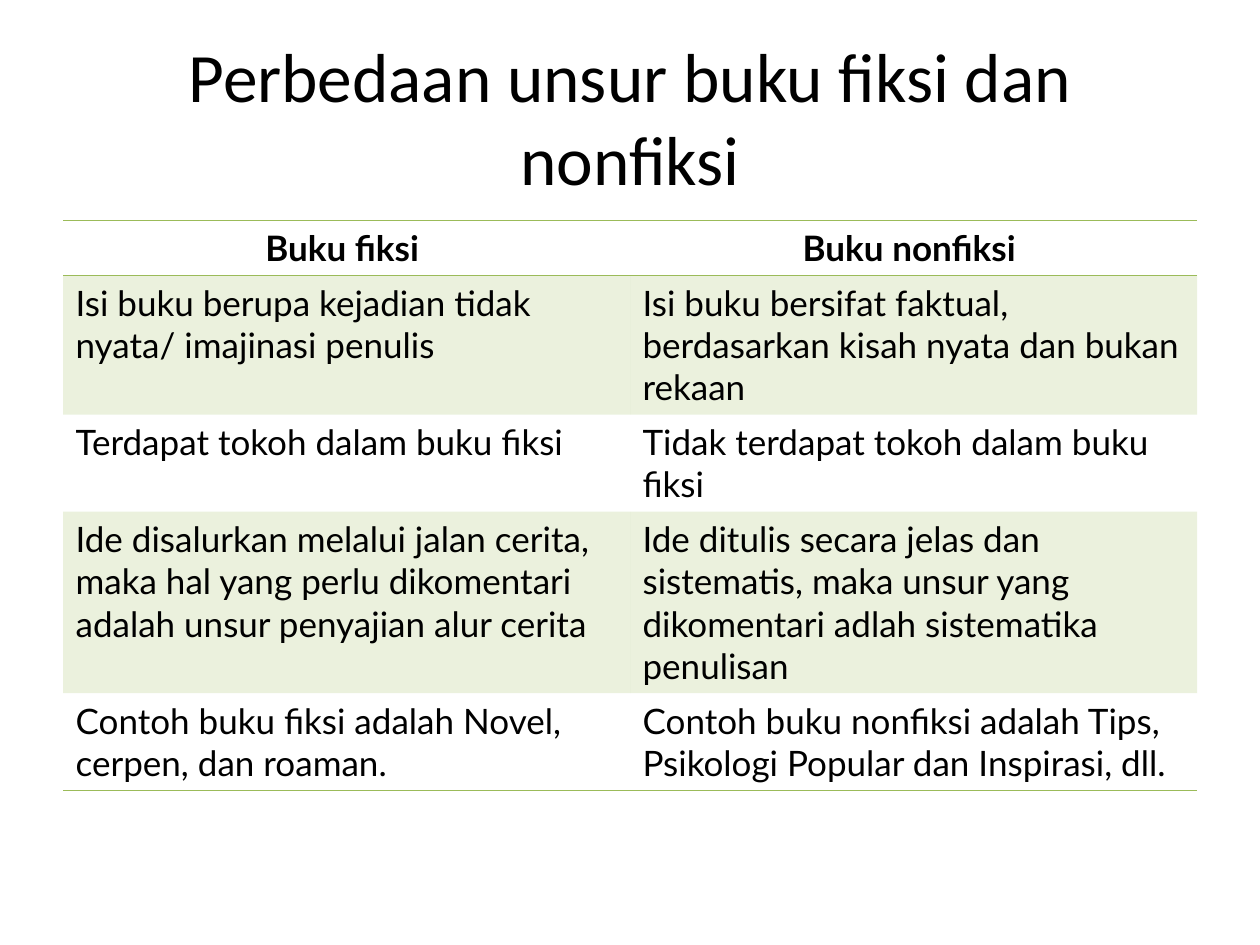
from lxml.etree import SubElement
from pptx import Presentation
from pptx.dml.color import RGBColor
from pptx.enum.text import MSO_ANCHOR, MSO_AUTO_SIZE, PP_ALIGN
from pptx.oxml.ns import qn
from pptx.util import Inches, Pt

TITLE = "Perbedaan unsur buku fiksi dan nonfiksi"
ROWS = [
    ("Buku fiksi ", "Buku nonfiksi "),
    ("Isi buku berupa kejadian tidak nyata/ imajinasi penulis",
     "Isi buku bersifat faktual, berdasarkan kisah nyata dan bukan rekaan"),
    ("Terdapat tokoh dalam buku fiksi",
     "Tidak terdapat tokoh dalam buku fiksi"),
    ("Ide disalurkan melalui jalan cerita, maka hal yang perlu dikomentari "
     "adalah unsur penyajian alur cerita",
     "Ide ditulis secara jelas dan sistematis, maka unsur yang dikomentari "
     "adlah sistematika penulisan"),
    ("Contoh buku fiksi adalah Novel, cerpen, dan roaman.",
     "Contoh buku nonfiksi adalah Tips, Psikologi Popular dan Inspirasi, dll."),
]
GREEN, BLACK = "9BBB59", "000000"
BAND_OPACITY = 20
PLAIN_STYLE = "{2D5ABB26-0587-4C30-8999-92F81FD0307C}"
LEFT, WIDTH = 0.5, 9
TITLE_FORMAT = {"name": "Calibri", "size": Pt(39.6), "bold": False}
HEADER_FORMAT = {"name": "Lato", "size": Pt(20), "bold": True}
BODY_FORMAT = {**HEADER_FORMAT, "bold": False}


def write(text_frame, text, formats, alignment):
    text_frame.text = text
    paragraph = text_frame.paragraphs[0]
    paragraph.alignment = alignment
    font = paragraph.runs[0].font
    for name, value in formats.items():
        setattr(font, name, value)
    font.color.rgb = RGBColor.from_string(BLACK)


def add_border(cell, side):
    properties = cell._tc.get_or_add_tcPr()
    line = SubElement(properties, qn(f"a:ln{side}"), w=str(Pt(1)))
    fill = SubElement(line, qn("a:solidFill"))
    SubElement(fill, qn("a:srgbClr"), val=GREEN)


def fill_band(cell):
    cell.fill.solid()
    cell.fill.fore_color.rgb = RGBColor.from_string(GREEN)
    color = cell._tc.tcPr.find(f"{qn('a:solidFill')}/{qn('a:srgbClr')}")
    SubElement(color, qn("a:alpha"), val=str(BAND_OPACITY * 1000))


def add_title(slide):
    title = slide.shapes.title
    title.left, title.top, title.width, title.height = map(
        Inches, (LEFT, 0.3, WIDTH, 1.25))
    write(title.text_frame, TITLE, TITLE_FORMAT, PP_ALIGN.CENTER)
    title.text_frame.auto_size = MSO_AUTO_SIZE.NONE
    title.text_frame.vertical_anchor = MSO_ANCHOR.MIDDLE


def add_comparison(slide):
    frame = slide.shapes.add_table(
        len(ROWS), len(ROWS[0]), Inches(LEFT), Inches(1.75), Inches(WIDTH), Inches(3.5))
    table = frame.table
    table._tbl.tblPr.find(qn("a:tableStyleId")).text = PLAIN_STYLE
    for row_index, texts in enumerate(ROWS):
        table.rows[row_index].height = Inches(0.41)
        is_header = row_index == 0
        for column_index, text in enumerate(texts):
            cell = table.cell(row_index, column_index)
            write(cell.text_frame, text,
                  HEADER_FORMAT if is_header else BODY_FORMAT,
                  PP_ALIGN.CENTER if is_header else PP_ALIGN.LEFT)
            if is_header:
                add_border(cell, "T")
            if row_index in (0, len(ROWS) - 1):
                add_border(cell, "B")
            if row_index % 2:
                fill_band(cell)
            else:
                cell.fill.background()
    frame.height = Inches(3.5)


def main():
    """Build the slide comparing fiction and nonfiction books."""
    presentation = Presentation()
    presentation.slide_width, presentation.slide_height = Inches(10), Inches(7.5)
    slide = presentation.slides.add_slide(presentation.slide_layouts[5])
    add_title(slide)
    add_comparison(slide)
    presentation.save("out.pptx")


if __name__ == "__main__":
    main()
